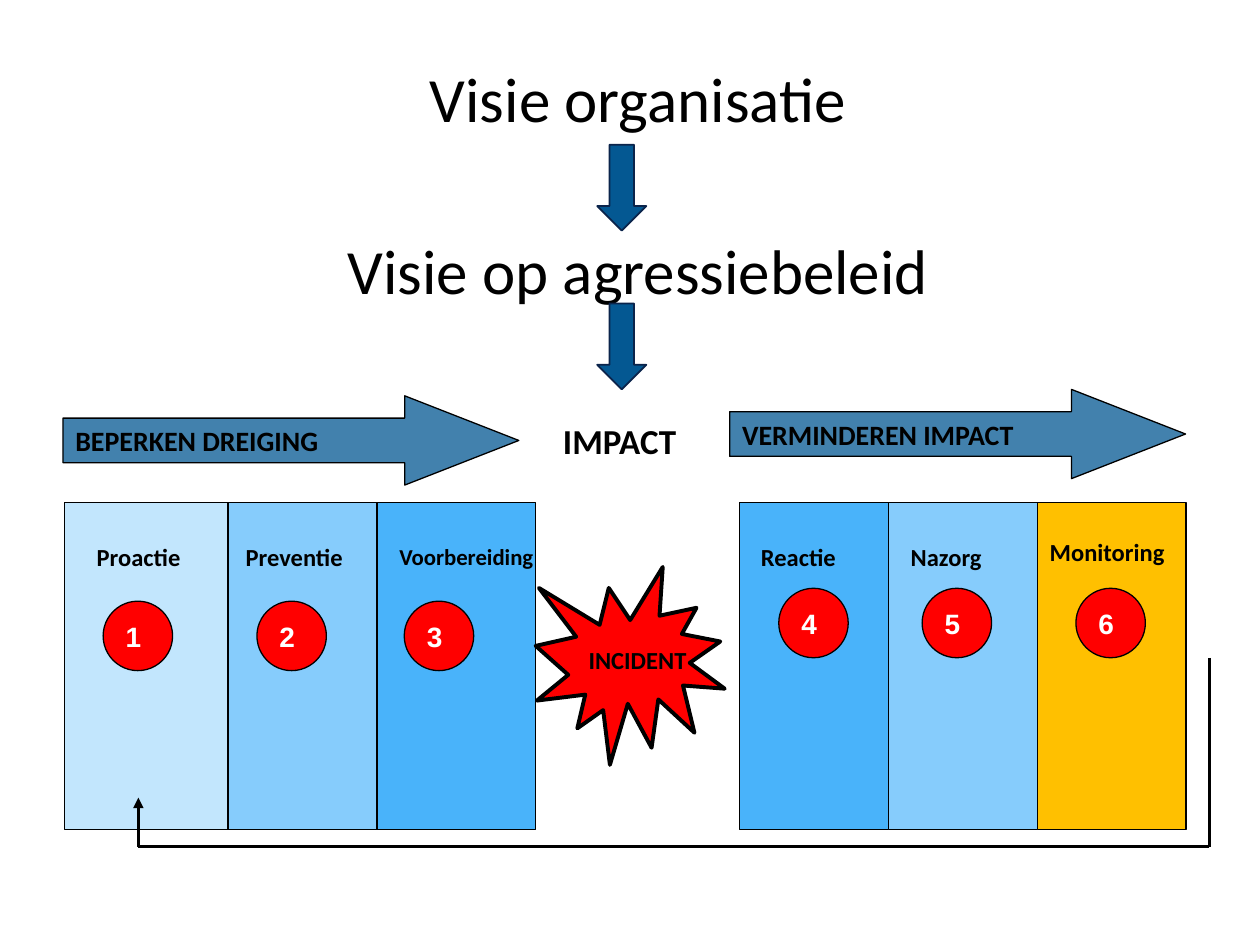
from dataclasses import dataclass

from lxml.etree import SubElement
from pptx import Presentation
from pptx.dml.color import RGBColor
from pptx.enum.shapes import MSO_CONNECTOR, MSO_SHAPE
from pptx.enum.text import MSO_ANCHOR, PP_ALIGN
from pptx.oxml.ns import qn
from pptx.util import Cm, Pt


@dataclass(frozen=True)
class Theme:
    ink: str = "000000"
    paper: str = "FFFFFF"
    alert: str = "FF0000"
    arrow: str = "045892"
    arrow_edge: str = "0B244B"
    pale: str = "C2E6FD"
    light: str = "86CCFC"
    bright: str = "49B3FA"
    gold: str = "FFC000"
    body_font: str = "Calibri"
    number_font: str = "Arial"
    title_size: int = 36
    impact_size: int = 20
    arrow_size: int = 16
    number_size: int = 16
    label_size: int = 14
    tight_size: int = 13


THEME = Theme()


def apply_format(target, values):
    for name, value in values.items():
        setattr(target, name, value)


class SlideBuilder:
    def __init__(self, slide, theme):
        self.slide = slide
        self.theme = theme

    def style_font(self, paragraph, size, color, family, bold=True):
        apply_format(paragraph.font, {"size": Pt(size), "bold": bold, "name": family})
        paragraph.font.color.rgb = RGBColor.from_string(color)

    def shape(self, preset, box, fill, line=None, width=0.75, alpha=None):
        shape = self.slide.shapes.add_shape(preset, *map(Cm, box))
        shape.shadow.inherit = False
        shape.fill.solid()
        shape.fill.fore_color.rgb = RGBColor.from_string(fill)
        if alpha:
            color = shape.fill._xPr.find(qn("a:solidFill"))[0]
            SubElement(color, qn("a:alpha")).set("val", str(alpha * 1000))
        if line:
            shape.line.color.rgb = RGBColor.from_string(line)
            shape.line.width = Pt(width)
        else:
            shape.line.fill.background()
        return shape

    def caption(self, shape, text, size, color=None, family=None, **frame_format):
        """Write one left-aligned, unwrapped line inside a shape."""
        frame = shape.text_frame
        apply_format(frame, {"word_wrap": False, "vertical_anchor": MSO_ANCHOR.MIDDLE,
                             **frame_format})
        paragraph = frame.paragraphs[0]
        paragraph.text = text
        paragraph.alignment = PP_ALIGN.LEFT
        self.style_font(paragraph, size, color or self.theme.ink,
                        family or self.theme.body_font)

    def panel(self, left, width, fill):
        return self.shape(MSO_SHAPE.RECTANGLE, (left, 10.13, width, 6.6), fill,
                          self.theme.ink)

    def label(self, left, text, fill, size):
        tag = self.shape(MSO_SHAPE.RECTANGLE, (left, 10.72, 2.5, 0.99), fill)
        self.caption(tag, text, size)

    def number(self, left, top, text):
        disc = self.shape(MSO_SHAPE.OVAL, (left, top, 1.4, 1.4), self.theme.alert,
                          self.theme.ink)
        self.caption(disc, text, self.theme.number_size, self.theme.paper,
                     self.theme.number_font)

    def stage_arrow(self, left, top, text):
        arrow = self.shape(MSO_SHAPE.RIGHT_ARROW, (left, top, 9.19, 1.8),
                           self.theme.arrow, self.theme.ink, alpha=75)
        arrow.adjustments[1] = 1.278
        self.caption(arrow, text, self.theme.arrow_size)

    def down_arrow(self, top):
        self.shape(MSO_SHAPE.DOWN_ARROW, (12.04, top, 0.99, 1.73), self.theme.arrow,
                   self.theme.arrow_edge, width=1)

    def feedback_path(self, points):
        """Join the points with straight lines, ending in an arrowhead."""
        for start, end in zip(points, points[1:]):
            line = self.slide.shapes.add_connector(
                MSO_CONNECTOR.STRAIGHT, *map(Cm, start + end))
            line.line.color.rgb = RGBColor.from_string(self.theme.ink)
            line.line.width = Pt(1.5)
            properties = line._element.spPr
            if end == points[-1]:
                SubElement(properties.find(qn("a:ln")), qn("a:tailEnd")).set(
                    "type", "triangle")
            SubElement(properties, qn("a:effectLst"))

    def title(self, box, lines, gap):
        frame = self.slide.shapes.add_textbox(*map(Cm, box)).text_frame
        frame.word_wrap = True
        for index, text in enumerate(lines):
            paragraph = frame.add_paragraph() if index else frame.paragraphs[0]
            paragraph.text = text
            paragraph.alignment = PP_ALIGN.CENTER
            if index:
                paragraph.space_before = Pt(gap)
            self.style_font(paragraph, self.theme.title_size, self.theme.ink,
                            self.theme.body_font, bold=False)


# name, panel left, panel width, fill, label left, number left, number top
PHASES = [
    ("Proactie", 1.3, 3.3, THEME.pale, 1.7, 2.08, 12.12),
    ("Preventie", 4.6, 3, THEME.light, 4.7, 5.18, 12.12),
    ("Voorbereiding", 7.6, 3.2, THEME.bright, 7.8, 8.15, 12.12),
    ("Reactie", 14.91, 3, THEME.bright, 15.09, 15.7, 11.86),
    ("Nazorg", 17.91, 3, THEME.light, 18.11, 18.59, 11.86),
    ("Monitoring", 20.91, 3, THEME.gold, None, 21.69, 11.86),
]


def main():
    presentation = Presentation()
    apply_format(presentation, {"slide_width": Cm(25.4), "slide_height": Cm(19.05)})
    slide = presentation.slides.add_slide(presentation.slide_layouts[6])
    builder = SlideBuilder(slide, THEME)

    for position, phase in enumerate(PHASES, start=1):
        name, left, width, fill, label_left, number_left, number_top = phase
        panel = builder.panel(left, width, fill)
        if label_left is None:
            builder.caption(panel, name, THEME.label_size, margin_top=Cm(0.69),
                            vertical_anchor=MSO_ANCHOR.TOP)
        else:
            size = THEME.tight_size if name == "Voorbereiding" else THEME.label_size
            builder.label(label_left, name, fill, size)
        builder.number(number_left, number_top, str(position))

    incident = builder.shape(MSO_SHAPE.EXPLOSION1, (10.8, 11.43, 3.81, 3.99),
                             THEME.alert, THEME.ink, width=2.25)
    builder.caption(incident, "INCIDENT", THEME.label_size)

    builder.stage_arrow(1.27, 7.98, "BEPERKEN DREIGING")
    builder.stage_arrow(14.71, 7.85, "VERMINDEREN IMPACT")
    impact = builder.shape(MSO_SHAPE.RECTANGLE, (11.1, 7.39, 3.2, 3), THEME.paper)
    builder.caption(impact, "IMPACT", THEME.impact_size)

    builder.feedback_path([(24.38, 13.26), (24.38, 17.07), (2.79, 17.07), (2.79, 16.08)])

    builder.title((5.99, 1.07, 13.74, 5.26),
                  ["Visie organisatie", "Visie op agressiebeleid"], gap=55)
    for top in (2.92, 6.12):
        builder.down_arrow(top)

    presentation.save("out.pptx")


if __name__ == "__main__":
    main()
